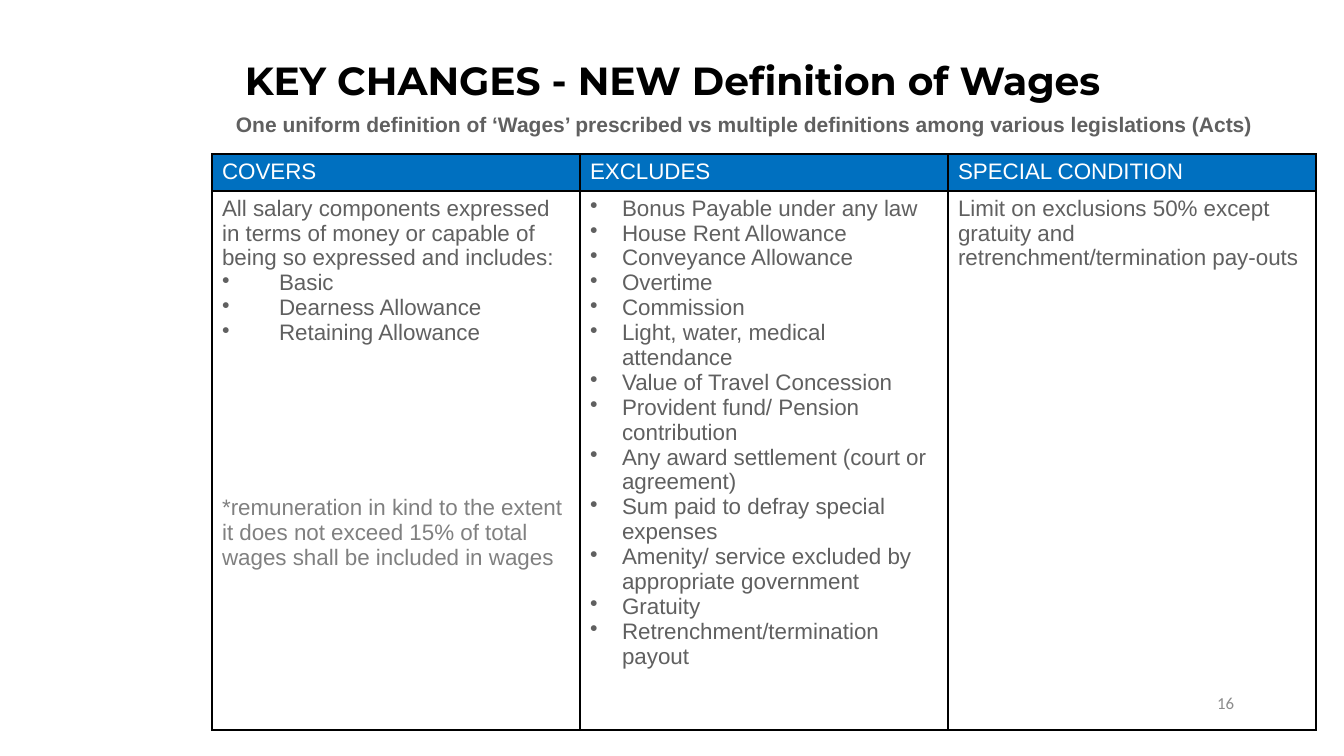
import dataclasses

import lxml.etree
import pptx
import pptx.dml.color
import pptx.enum.text
import pptx.oxml.ns
import pptx.util

EMU_PER_PX = 12192000 / 1344
ALIGN = pptx.enum.text.PP_ALIGN
ANCHOR = pptx.enum.text.MSO_ANCHOR


@dataclasses.dataclass(frozen=True)
class Theme:
    """Colours, fonts and type sizes of the slide."""
    black: str = "000000"
    white: str = "FFFFFF"
    blue: str = "0070C0"
    body: str = "606060"
    note: str = "808080"
    number: str = "8C8C8C"
    title_font: str = "Montserrat"
    body_font: str = "Arial"
    number_font: str = "Calibri"
    title_size: int = 28
    subtitle_size: int = 15
    table_size: int = 16
    number_size: int = 12
    border_width: int = 1


THEME = Theme()

HEADERS = ["COVERS", "EXCLUDES", "SPECIAL CONDITION"]
COVERS_INTRO = ("All salary components expressed in terms of money or capable "
                "of being so expressed and includes:")
COVERS = ["Basic", "Dearness Allowance", "Retaining Allowance"]
COVERS_NOTE = ("*remuneration in kind to the extent it does not exceed 15% of "
               "total wages shall be included in wages")
EXCLUDES = [
    "Bonus Payable under any law",
    "House Rent Allowance",
    "Conveyance Allowance",
    "Overtime",
    "Commission",
    "Light, water, medical attendance",
    "Value of Travel Concession",
    "Provident fund/ Pension contribution",
    "Any award settlement (court or agreement)",
    "Sum paid to defray special expenses",
    "Amenity/ service excluded by appropriate government",
    "Gratuity",
    "Retrenchment/termination payout",
]
SPECIAL_CONDITION = ("Limit on exclusions 50% except gratuity and "
                     "retrenchment/termination pay-outs")


def px(n):
    """Turn pixels into EMU."""
    return pptx.util.Emu(round(n * EMU_PER_PX))


def rgb(color):
    """Turn a hex string into a colour."""
    return pptx.dml.color.RGBColor.from_string(color)


def add_run(p, text, font, size, color, bold=False):
    """Add one styled run to a paragraph."""
    r = p.add_run()
    r.text = text
    r.font.name = font
    r.font.size = pptx.util.Pt(size)
    r.font.bold = bold
    r.font.color.rgb = rgb(color)


def add_line(s, box, text, font, size, color, bold=False,
             align=ALIGN.LEFT, anchor=ANCHOR.TOP):
    """Place a wrapped text box holding one paragraph."""
    tf = s.shapes.add_textbox(*map(px, box)).text_frame
    tf.word_wrap = True
    tf.vertical_anchor = anchor
    p = tf.paragraphs[0]
    p.alignment = align
    add_run(p, text, font, size, color, bold)


def add_bullet(p, indent):
    """Give a paragraph a round bullet with a hanging indent."""
    pPr = p._p.get_or_add_pPr()
    pPr.set("marL", str(px(indent)))
    pPr.set("indent", str(-px(indent)))
    bullet = lxml.etree.SubElement(pPr, pptx.oxml.ns.qn("a:buChar"))
    bullet.set("char", "•")


def add_borders(cell):
    """Draw a thin line on all four sides of a cell."""
    tcPr = cell._tc.get_or_add_tcPr()
    for side in ("lnL", "lnR", "lnT", "lnB"):
        ln = lxml.etree.SubElement(tcPr, pptx.oxml.ns.qn(f"a:{side}"))
        ln.set("w", str(pptx.util.Pt(THEME.border_width)))
        fill = lxml.etree.SubElement(ln, pptx.oxml.ns.qn("a:solidFill"))
        color = lxml.etree.SubElement(fill, pptx.oxml.ns.qn("a:srgbClr"))
        color.set("val", THEME.black)


def fill_cell(cell, paragraphs, fill=None):
    """Write (text, colour, bullet indent, points before) into a cell."""
    add_borders(cell)
    if fill:
        cell.fill.solid()
        cell.fill.fore_color.rgb = rgb(fill)
    else:
        cell.fill.background()
    tf = cell.text_frame
    for i, (text, color, indent, before) in enumerate(paragraphs):
        p = tf.add_paragraph() if i else tf.paragraphs[0]
        if indent:
            add_bullet(p, indent)
        if before:
            p.space_before = pptx.util.Pt(before)
        add_run(p, text, THEME.body_font, THEME.table_size, color)


def add_heading(s, box):
    """Place the title with the subtitle below it."""
    x, y, w, h = box
    add_line(s, (x, y, w, 98), "KEY CHANGES - NEW Definition of Wages",
             THEME.title_font, THEME.title_size, THEME.black, True,
             ALIGN.CENTER, ANCHOR.MIDDLE)
    add_line(s, (x + 133, y + h - 35, w - 90, 35),
             "One uniform definition of ‘Wages’ prescribed vs multiple "
             "definitions among various legislations (Acts)",
             THEME.body_font, THEME.subtitle_size, THEME.body, True)


def add_wages_table(s, box):
    """Place the three-column table of the wage definition."""
    x, y, w, h = box
    header_h = 36
    table = s.shapes.add_table(2, len(HEADERS), *map(px, box)).table
    table.first_row = table.horz_banding = False
    for column in table.columns:
        column.width = px(w // len(HEADERS))
    table.rows[0].height = px(header_h)
    table.rows[1].height = px(h - header_h)

    covers = [(COVERS_INTRO, THEME.body, 0, 0)]
    covers += [(text, THEME.body, 57, 0) for text in COVERS]
    covers.append((COVERS_NOTE, THEME.note, 0, 107))
    excludes = [(text, THEME.body, 32, 0) for text in EXCLUDES]
    special = [(SPECIAL_CONDITION, THEME.body, 0, 0)]
    for i, (header, body) in enumerate(zip(HEADERS, (covers, excludes, special))):
        fill_cell(table.cell(0, i), [(header, THEME.white, 0, 0)], THEME.blue)
        fill_cell(table.cell(1, i), body)


def add_page_number(s, box):
    """Place the page number at the right of its box."""
    add_line(s, box, "16", THEME.number_font, THEME.number_size,
             THEME.number, align=ALIGN.RIGHT)


def main():
    """Build the slide and save it."""
    prs = pptx.Presentation()
    prs.slide_width, prs.slide_height = px(1344), px(756)
    s = prs.slides.add_slide(prs.slide_layouts[6])
    add_heading(s, (93, 31, 1159, 111))
    add_page_number(s, (964, 688, 280, 50))
    add_wages_table(s, (212, 154, 1104, 575))
    prs.save("out.pptx")


if __name__ == "__main__":
    main()
